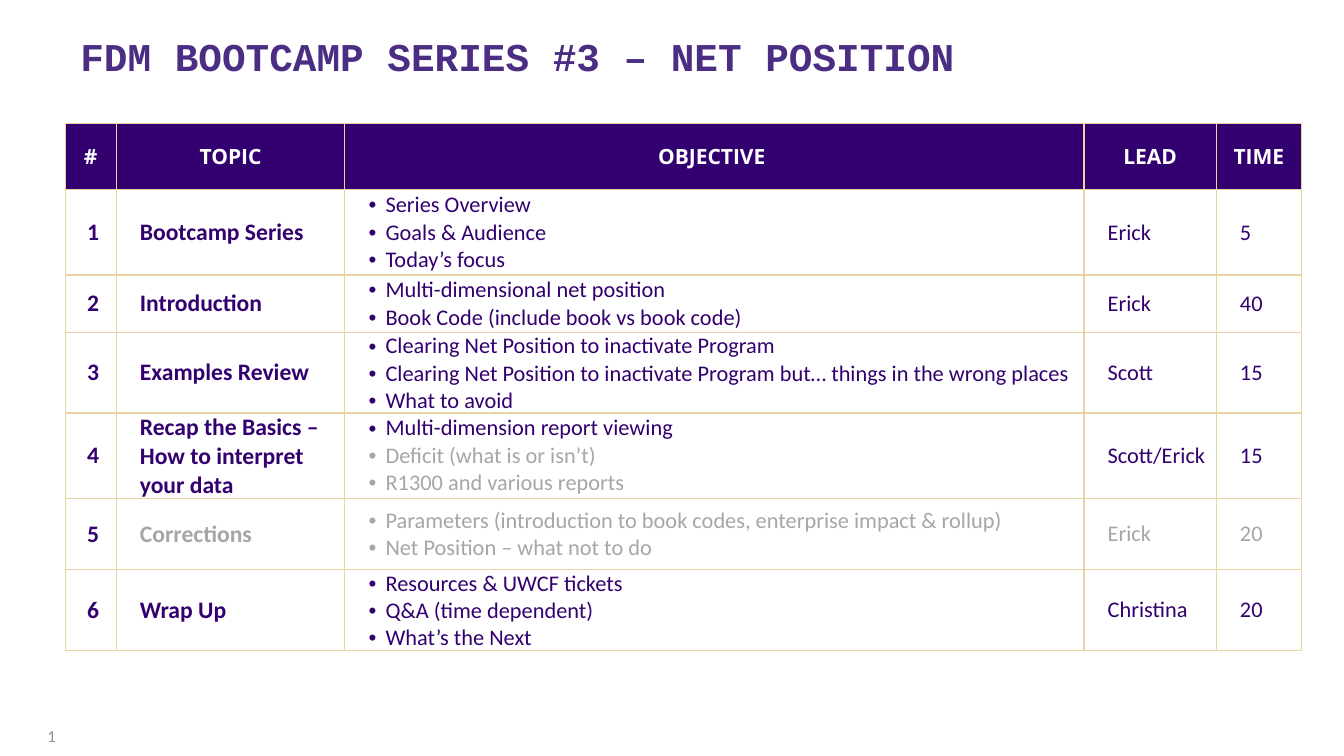
from dataclasses import dataclass

from lxml.etree import SubElement
from pptx import Presentation
from pptx.dml.color import RGBColor
from pptx.enum.text import MSO_ANCHOR, PP_ALIGN
from pptx.oxml.ns import qn
from pptx.util import Inches, Pt


@dataclass(frozen=True)
class Theme:
    white: str = "FFFFFF"
    purple: str = "33006F"
    violet: str = "4B2E83"
    grey: str = "A6A6A6"
    slate: str = "908CA4"
    gold: str = "E8D3A2"
    title: float = 30
    head: float = 16
    topic: float = 18
    body: float = 17
    page: float = 12.8


THEME = Theme()
HEADS = ["#", "TOPIC", "OBJECTIVE\u00a0", "LEAD", "TIME"]
WIDTHS = [0.54, 2.42, 7.82, 1.4, 0.9]
HEIGHTS = [0.7, 0.9, 0.61, 0.56, 0.81, 0.76, 0.7]
# Topic, objectives, lead, minutes, count of objectives that are not greyed out
AGENDA = [
    ("Bootcamp Series",
     ["Series Overview", "Goals & Audience", "Today’s focus"],
     "Erick", 5, 3),
    ("Introduction",
     ["Multi-dimensional net position",
      "Book Code (include book vs book code)"],
     "Erick", 40, 2),
    ("Examples Review",
     ["Clearing Net Position to inactivate Program",
      "Clearing Net Position to inactivate Program but… things in the wrong places",
      "What to avoid"],
     "Scott", 15, 3),
    ("Recap the Basics – How to interpret your data",
     ["Multi-dimension report viewing", "Deficit (what is or isn’t)",
      "R1300 and various reports"],
     "Scott/Erick", 15, 1),
    ("Corrections",
     ["Parameters (introduction to book codes, enterprise impact & rollup)",
      "Net Position – what not to do"],
     "Erick", 20, 0),
    ("Wrap Up",
     ["Resources & UWCF tickets", "Q&A (time dependent)", "What’s the Next"],
     "Christina", 20, 3),
]


def style(size, color, name="Calibri", bold=False):
    return {"size": Pt(size), "name": name, "bold": bold, "color": color}


def add_run(para, text, form):
    run = para.add_run()
    run.text = text
    for key, value in form.items():
        if key == "color":
            run.font.color.rgb = RGBColor.from_string(value)
        else:
            setattr(run.font, key, value)


def indent(para, left, first=0, bullet=None):
    props = para._p.get_or_add_pPr()
    props.set("marL", str(Inches(left)))
    props.set("indent", str(Inches(first)))
    if bullet:
        SubElement(props, qn("a:buFont"), typeface="Arial")
        SubElement(props, qn("a:buChar"), char=bullet)


def set_cell(cell, fill, left=0):
    """Set the borders, fill, margins and anchor of a cell."""
    props = cell._tc.get_or_add_tcPr()
    for side in ("lnL", "lnR", "lnT", "lnB"):
        line = SubElement(props, qn(f"a:{side}"), w=str(Pt(1)))
        paint = SubElement(line, qn("a:solidFill"))
        SubElement(paint, qn("a:srgbClr"), val=THEME.gold)
    cell.fill.solid()
    cell.fill.fore_color.rgb = RGBColor.from_string(fill)
    form = {"margin_left": Inches(left), "margin_right": 0, "margin_top": 0,
            "margin_bottom": 0, "vertical_anchor": MSO_ANCHOR.MIDDLE}
    for key, value in form.items():
        setattr(cell, key, value)


def write_mid(cell, text, form):
    para = cell.text_frame.paragraphs[0]
    para.alignment = PP_ALIGN.CENTER
    add_run(para, text, form)


def write_left(cell, text, form):
    para = cell.text_frame.paragraphs[0]
    indent(para, 0.2)
    add_run(para, text, form)


def write_list(cell, items, live):
    frame = cell.text_frame
    for index, item in enumerate(items):
        para = frame.add_paragraph() if index else frame.paragraphs[0]
        indent(para, 0.38, -0.18, "•")
        color = THEME.purple if index < live else THEME.grey
        add_run(para, item, style(THEME.body, color))


def add_title(slide, text):
    title = slide.shapes.title
    box = {"left": 0.75, "top": 0.36, "width": 13.08, "height": 0.52}
    for key, value in box.items():
        setattr(title, key, Inches(value))
    title.text_frame.vertical_anchor = MSO_ANCHOR.MIDDLE
    para = title.text_frame.paragraphs[0]
    para.alignment = PP_ALIGN.LEFT
    para.line_spacing = 0.9
    add_run(para, text, style(THEME.title, THEME.violet, "Courier New", True))


def add_page(slide, number):
    box = slide.shapes.add_textbox(
        Inches(0.19), Inches(7.57), Inches(0.5), Inches(0.43))
    frame = box.text_frame
    frame.word_wrap = True
    frame.vertical_anchor = MSO_ANCHOR.MIDDLE
    para = frame.paragraphs[0]
    para.alignment = PP_ALIGN.RIGHT
    add_run(para, str(number), style(THEME.page, THEME.slate))


def add_agenda(slide):
    table = slide.shapes.add_table(
        len(HEIGHTS), len(WIDTHS), Inches(0.69), Inches(1.31),
        Inches(sum(WIDTHS)), Inches(sum(HEIGHTS))).table
    table.horz_banding = False
    for column, width in zip(table.columns, WIDTHS):
        column.width = Inches(width)
    for row, height in zip(table.rows, HEIGHTS):
        row.height = Inches(height)

    for cell, head in zip(table.rows[0].cells, HEADS):
        set_cell(cell, THEME.purple)
        write_mid(cell, head, style(THEME.head, THEME.white, "Open Sans", True))

    for number, (topic, items, lead, time, live) in enumerate(AGENDA, 1):
        cells = list(table.rows[number].cells)
        for cell in cells:
            set_cell(cell, THEME.white, 0.05)
        color = THEME.purple if live else THEME.grey
        plain = style(THEME.body, color)
        write_mid(cells[0], str(number),
                  style(THEME.topic, THEME.purple, bold=True))
        write_left(cells[1], topic, style(THEME.topic, color, bold=True))
        write_list(cells[2], items, live)
        write_left(cells[3], lead, plain)
        write_left(cells[4], str(time), plain)


def main():
    deck = Presentation()
    deck.slide_width, deck.slide_height = Inches(14.22), Inches(8)
    slide = deck.slides.add_slide(deck.slide_layouts[5])
    add_title(slide, "FDM BOOTCAMP SERIES #3 – NET POSITION")
    add_page(slide, 1)
    add_agenda(slide)
    deck.save("out.pptx")


if __name__ == "__main__":
    main()
